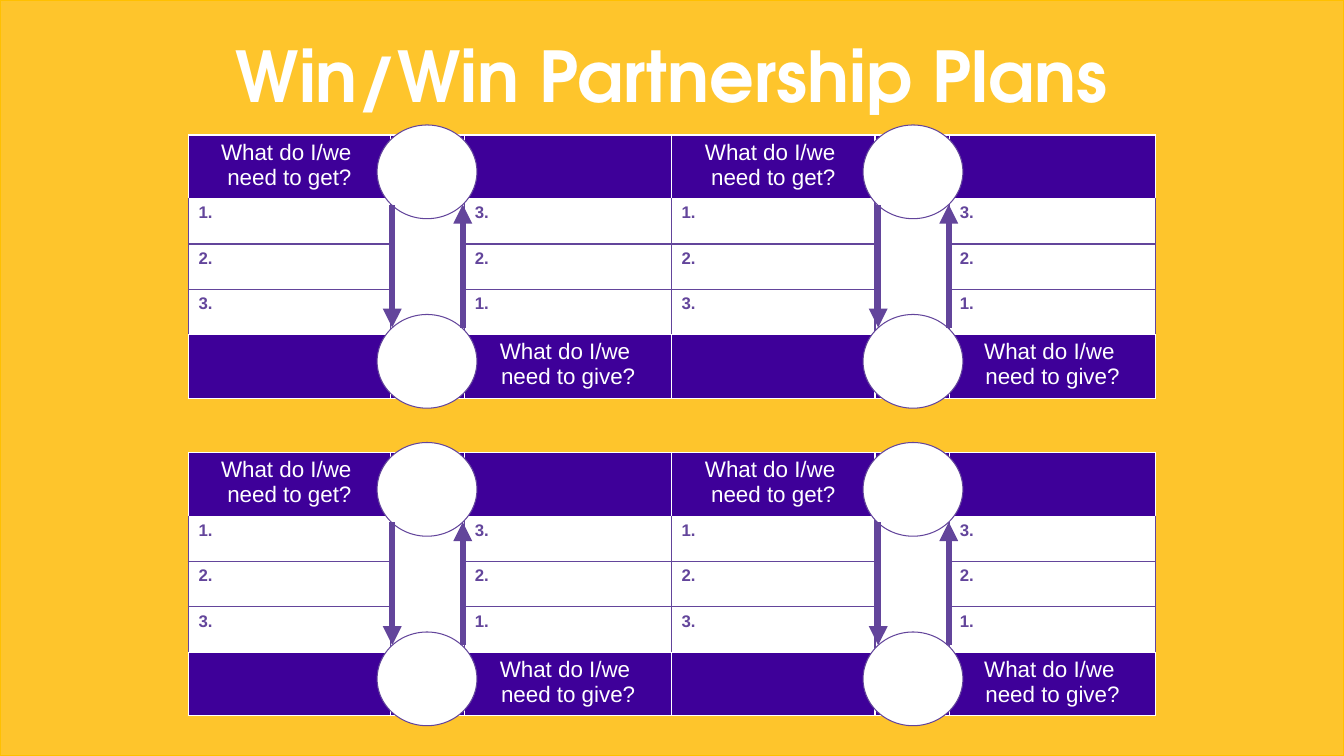
"""Build the Win/Win Partnership Plans slide."""
from pptx import Presentation
from pptx import util as u
from pptx.dml import color
from pptx.enum import shapes, text
from pptx.oxml import parse_xml
from pptx.oxml.ns import nsdecls

COLORS = {
    "gold": "FEC52C",
    "gold_edge": "FFC000",
    "indigo": "3E0099",
    "violet": "63459B",
    "white": "FFFFFF",
}
TITLE_FORMAT = {"name": "TeX Gyre Adventor", "size": u.Pt(50), "bold": True}
QUESTION_FORMAT = {"name": "Arial", "size": u.Pt(16), "bold": False}
NUMBER_FORMAT = {"name": "Arial", "size": u.Pt(12), "bold": True}

TABLE_LEFT = 1.87
TABLE_TOPS = [1.34, 4.49]
CIRCLE_LEFTS = [3.74, 8.56]
COLUMN_WIDTHS = [2, 0.74, 2.05, 2.02, 0.74, 2.04]
ROW_HEIGHTS = [0.63, 0.45, 0.45, 0.45, 0.63]
LINK_COLUMNS = [1, 4]
LAST_ROW = len(ROW_HEIGHTS) - 1
GET = ["What do I/we ", "need to get?"]
GIVE = ["What do I/we ", "need to give?"]
PLAN_TEXT = [
    [GET, [], [], GET, [], []],
    *[[[f"{n}."], [], [f"{4 - n}."]] * 2 for n in (1, 2, 3)],
    [[], [], GIVE, [], [], GIVE],
]


def rgb(name):
    return color.RGBColor.from_string(COLORS[name])


def fill_solid(fill, name):
    fill.solid()
    fill.fore_color.rgb = rgb(name)


def write_lines(frame, lines, font_format, ink, align):
    for index, line in enumerate(lines):
        para = frame.paragraphs[0] if index == 0 else frame.add_paragraph()
        para.alignment = align
        span = para.add_run()
        span.text = line
        for key, value in font_format.items():
            setattr(span.font, key, value)
        span.font.color.rgb = rgb(ink)


def add_panel(page, kind, box, fill, line, weight):
    panel = page.shapes.add_shape(kind, *map(u.Inches, box))
    panel.shadow.inherit = False
    fill_solid(panel.fill, fill)
    panel.line.color.rgb = rgb(line)
    panel.line.width = u.Pt(weight)
    return panel


def add_title(page, words):
    title = page.shapes.title
    place = {"left": 1.02, "top": 0.27, "width": 11.29, "height": 0.94}
    for key, value in place.items():
        setattr(title, key, u.Inches(value))
    frame = title.text_frame
    frame.word_wrap = True
    frame.auto_size = text.MSO_AUTO_SIZE.NONE
    frame.vertical_anchor = text.MSO_ANCHOR.TOP
    write_lines(frame, [words], TITLE_FORMAT, "white", text.PP_ALIGN.CENTER)
    return title


def set_borders(cell, sides):
    properties = cell._tc.get_or_add_tcPr()
    for index, (side, name) in enumerate(sides.items()):
        properties.insert(index, parse_xml(
            f'<a:ln{side} {nsdecls("a")} w="12700"><a:solidFill>'
            f'<a:srgbClr val="{COLORS[name]}"/></a:solidFill></a:ln{side}>'))


def border_colors(row, column):
    is_body = 0 < row < LAST_ROW
    is_ruled = is_body and column not in LINK_COLUMNS
    side = "violet" if is_body else "white"
    above = "violet" if is_ruled and row > 1 else "white"
    below = "violet" if is_ruled and row < LAST_ROW - 1 else "white"
    return {"L": side, "R": side, "T": above, "B": below}


def add_plan_table(page, top):
    box = TABLE_LEFT, top, sum(COLUMN_WIDTHS), sum(ROW_HEIGHTS)
    table = page.shapes.add_table(
        len(ROW_HEIGHTS), len(COLUMN_WIDTHS), *map(u.Inches, box)).table
    table.first_row = table.horz_banding = False
    for column, width in zip(table.columns, COLUMN_WIDTHS):
        column.width = u.Inches(width)
    for row, height in zip(table.rows, ROW_HEIGHTS):
        row.height = u.Inches(height)
    for row, entries in enumerate(PLAN_TEXT):
        is_body = 0 < row < LAST_ROW
        if is_body:
            style = NUMBER_FORMAT, "violet", text.PP_ALIGN.LEFT
        else:
            style = QUESTION_FORMAT, "white", text.PP_ALIGN.CENTER
        for column, lines in enumerate(entries):
            cell = table.cell(row, column)
            fill_solid(cell.fill, "white" if is_body else "indigo")
            set_borders(cell, border_colors(row, column))
            write_lines(cell.text_frame, lines, *style)
    for column in LINK_COLUMNS:
        table.cell(1, column).merge(table.cell(LAST_ROW - 1, column))


def add_arrow(page, x, bottom, top, end):
    arrow = page.shapes.add_connector(
        shapes.MSO_CONNECTOR.STRAIGHT, *map(u.Inches, (x, bottom, x, top)))
    arrow.line.color.rgb = rgb("violet")
    arrow.line.width = u.Pt(4.5)
    arrow.line._get_or_add_ln().append(
        parse_xml(f'<a:{end} {nsdecls("a")} type="triangle"/>'))
    arrow.element.spPr.append(parse_xml(f'<a:effectLst {nsdecls("a")}/>'))


def add_exchange(page, left, table_top):
    for offset in (-0.1, 1.78):
        add_panel(page, shapes.MSO_SHAPE.OVAL,
                  (left, table_top + offset, 0.99, 0.93),
                  "white", "violet", 0.75)
    for offset, end in ((0.15, "headEnd"), (0.85, "tailEnd")):
        add_arrow(page, left + offset, table_top + 1.91, table_top + 0.69, end)


def main():
    deck = Presentation()
    deck.slide_width, deck.slide_height = u.Inches(13.33), u.Inches(7.5)
    page = deck.slides.add_slide(deck.slide_layouts[5])
    title = add_title(page, "Win/Win Partnership Plans")
    backdrop = add_panel(page, shapes.MSO_SHAPE.RECTANGLE,
                         (0, 0, 13.33, 7.5), "gold", "gold_edge", 1)
    title.element.addprevious(backdrop.element)
    for top in TABLE_TOPS:
        add_plan_table(page, top)
    for top in TABLE_TOPS:
        for left in CIRCLE_LEFTS:
            add_exchange(page, left, top)
    deck.save("out.pptx")


if __name__ == "__main__":
    main()
